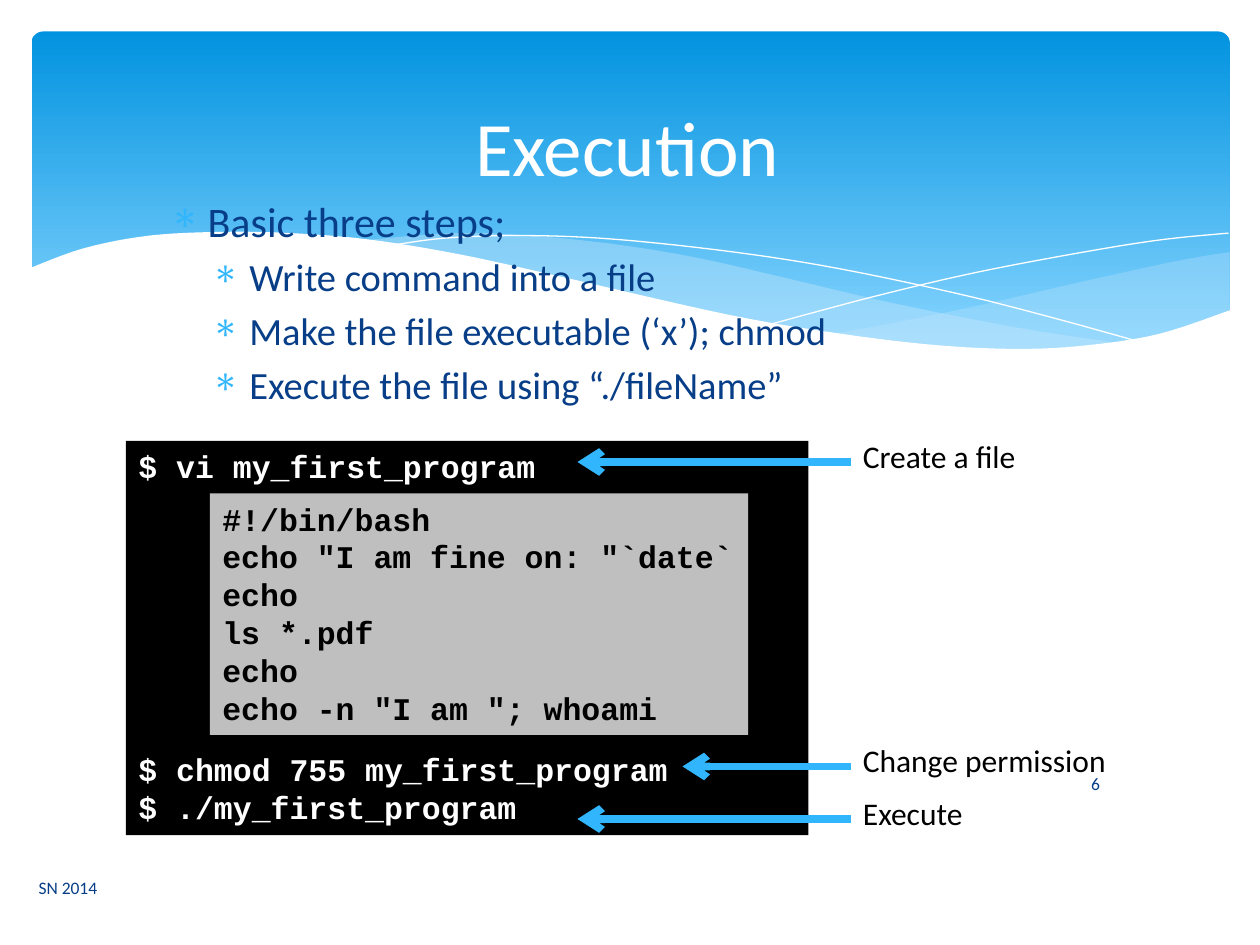
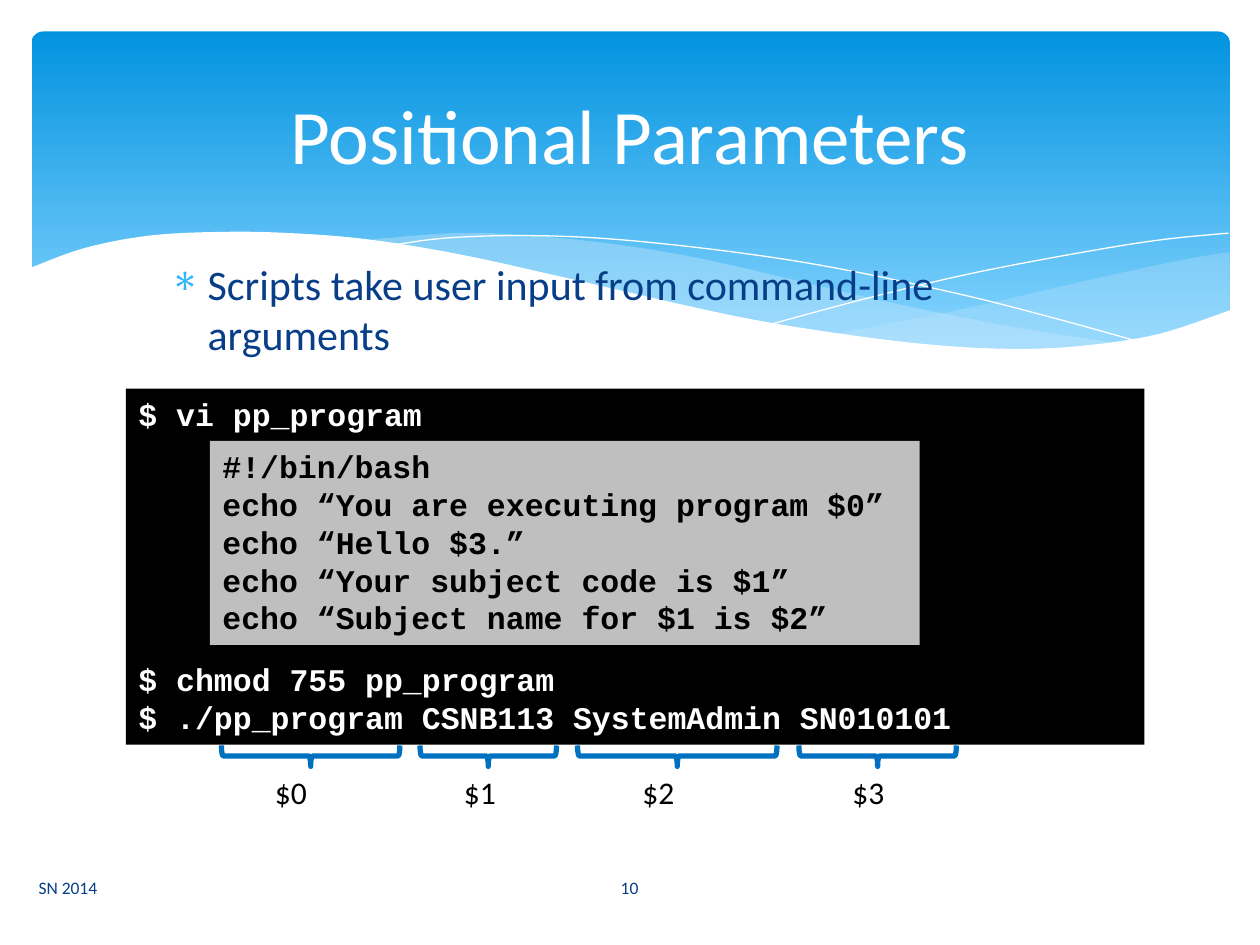
"""Build two shell scripting slides: script execution and positional parameters."""
from lxml import etree
from pptx import Presentation
from pptx import util as u
from pptx.dml.color import RGBColor
from pptx.enum import shapes, text
from pptx.oxml.ns import qn

COLORS = {
    "sky_top": "0293E0", "sky_bottom": "83D3FE", "wave": "C6E7FC",
    "white": "FFFFFF", "black": "000000", "navy": "073E87",
    "accent": "31B6FD", "gray": "BFBFBF", "brace": "0070C0",
}
FORMATS = {
    "title": {"name": "Calibri", "size": u.Pt(44), "color": "white"},
    "body": {"name": "Calibri", "size": u.Pt(24), "color": "navy"},
    "sub": {"name": "Calibri", "size": u.Pt(22), "color": "navy"},
    "footer": {"name": "Calibri", "size": u.Pt(10), "color": "navy"},
    "label": {"name": "Calibri", "size": u.Pt(18), "color": "black"},
    "shell": {"name": "Courier New", "size": u.Pt(18), "bold": True, "color": "white"},
    "code": {"name": "Courier New", "size": u.Pt(18), "bold": True, "color": "black"},
}
CODE_LINE = 21.65
RIGHT_WAVE = (
    [(702.7, 144), (673.2, 149), (619.9, 160.6), (560.9, 174.2), (508.3, 185),
     (475.9, 190.8)],
    [(475.9, 190.8), (517.7, 195.8), (553.7, 199.4), (586.1, 200.2), (621.4, 198),
     (651.6, 193.7), (678.2, 186.5), (702.7, 177.8)],
)
LONG_WAVE = (
    [(643, 196.6), (581, 187.2), (508.3, 172.8), (452.9, 159.8), (399.6, 147.6),
     (352.1, 139.7), (302.4, 134.6), (259.9, 133.2), (205.9, 137.5)],
    [(205.9, 137.5), (260.6, 146.2), (323.3, 159.8), (381.6, 172.8), (445, 185.8),
     (500.4, 194.4), (547.9, 199.4), (589, 200.2), (643, 196.6)],
)
FALLING_LINE = [(222.5, 140.4), (254.2, 136.1), (299.5, 134.6), (352.1, 136.8),
                (419, 144), (478.8, 153.4), (547.2, 167.8), (598.3, 180.7),
                (653, 195.8)]
RISING_LINE = [(441.4, 185), (500.4, 169.2), (558.7, 155.5), (623.5, 143.3),
               (665.3, 136.8), (702, 133.2)]
WHITE_EDGE = [(703.4, 177.1), (662.4, 190.8), (621.4, 197.3), (582.5, 199.4),
              (535.7, 197.3), (481, 190.8), (416.9, 180), (321.8, 158.4),
              (262.8, 145.4), (210.2, 136.8), (165.6, 133.2), (127.4, 132.5),
              (85.7, 134.6), (48.2, 141.8), (16.6, 153.4)]
WHITE_CORNERS = [(16.6, 237), (703.4, 237)]


def rgb(name):
    """Return the named colour."""
    return RGBColor.from_string(COLORS[name])


def pts(*values):
    """Convert numbers in points to lengths."""
    return [u.Pt(v) for v in values]


def smooth(knots, steps=6):
    """Return points on a Catmull-Rom curve through the knots."""
    ends = [knots[0], *knots, knots[-1]]
    curve = [knots[0]]
    for a, b, c, d in zip(ends, ends[1:], ends[2:], ends[3:]):
        for i in range(1, steps + 1):
            t = i / steps
            curve.append(tuple(
                0.5 * (2 * q + (s - o) * t + (2 * o - 5 * q + 4 * s - v) * t ** 2
                       + (3 * q - o - 3 * s + v) * t ** 3)
                for o, q, s, v in zip(a, b, c, d)))
    return curve


def style_run(r, fmt):
    """Apply a named text format to a run."""
    for key, value in FORMATS[fmt].items():
        if key == "color":
            r.font.color.rgb = rgb(value)
        else:
            setattr(r.font, key, value)


def add_paragraph(tf, content, fmt, **props):
    """Fill the first free paragraph of a frame and return it."""
    p = tf.paragraphs[0]
    if p.runs:
        p = tf.add_paragraph()
    r = p.add_run()
    r.text = content
    style_run(r, fmt)
    for key, value in props.items():
        setattr(p, key, value)
    return p


def add_label(s, content, box, fmt="label", align=text.PP_ALIGN.LEFT,
              anchor=text.MSO_ANCHOR.TOP, wrap=True):
    """Add a text box with one line of text."""
    tf = s.shapes.add_textbox(*pts(*box)).text_frame
    tf.word_wrap = wrap
    tf.vertical_anchor = anchor
    add_paragraph(tf, content, fmt, alignment=align)


def add_freeform(s, points, fill=None, alpha=None):
    """Add a filled outline, or an open white hairline when no fill is given."""
    start, *rest = [pts(*point) for point in points]
    builder = s.shapes.build_freeform(*start)
    builder.add_line_segments(rest, close=fill is not None)
    sp = builder.convert_to_shape()
    sp.shadow.inherit = False
    if fill is None:
        sp.fill.background()
        sp.line.color.rgb = rgb("white")
        sp.line.width = u.Pt(0)
        return
    sp.fill.solid()
    sp.fill.fore_color.rgb = rgb(fill)
    sp.line.fill.background()
    if alpha:
        color = sp._element.spPr.find(qn("a:solidFill"))[0]
        etree.SubElement(color, qn("a:alpha"), val=str(alpha * 1000))


def add_band(s):
    """Add the blue gradient band with its waves."""
    sp = s.shapes.add_shape(shapes.MSO_SHAPE.ROUNDED_RECTANGLE, *pts(18, 18, 684.7, 194.4))
    sp.adjustments[0] = 0.034
    sp.shadow.inherit = False
    sp.line.fill.background()
    sp.fill.gradient()
    sp.fill.gradient_angle = 270
    stops = zip(sp.fill.gradient_stops, (0, 0.9), ("sky_top", "sky_bottom"))
    for stop, position, color in stops:
        stop.position = position
        stop.color.rgb = rgb(color)
    for (top, bottom), alpha in ((RIGHT_WAVE, 29), (LONG_WAVE, 40)):
        add_freeform(s, smooth(top) + smooth(bottom), "wave", alpha)
    for knots in (FALLING_LINE, RISING_LINE):
        add_freeform(s, smooth(knots))
    add_freeform(s, smooth(WHITE_EDGE) + WHITE_CORNERS, "white")


def add_bullets(s, top, items):
    """Add the bulleted body text from (level, text) pairs."""
    tf = s.shapes.add_textbox(*pts(90, top, 540, 283.5)).text_frame
    tf.word_wrap = True
    for level, content in items:
        fmt = ("body", "sub")[level]
        p = add_paragraph(tf, content, fmt, level=level,
                          space_before=int(FORMATS[fmt]["size"] * 0.2))
        pPr = p._p.get_or_add_pPr()
        pPr.set("marL", str(u.Pt((21.6, 45.4)[level])))
        pPr.set("indent", str(u.Pt(-21.6)))
        color = etree.SubElement(pPr, qn("a:buClr"))
        etree.SubElement(color, qn("a:srgbClr"), val=COLORS["accent"])
        etree.SubElement(pPr, qn("a:buChar"), char="∗")


def add_panel(s, box, fill, fmt, lines, wrap=True):
    """Add a rectangle of code and return its text frame."""
    sp = s.shapes.add_shape(shapes.MSO_SHAPE.RECTANGLE, *pts(*box))
    sp.shadow.inherit = False
    sp.fill.solid()
    sp.fill.fore_color.rgb = rgb(fill)
    sp.line.fill.background()
    tf = sp.text_frame
    tf.word_wrap = wrap
    tf.vertical_anchor = text.MSO_ANCHOR.TOP
    for line in lines:
        add_paragraph(tf, line, fmt, alignment=text.PP_ALIGN.LEFT)
    return tf


def add_terminal(s, box, commands, script_box, script):
    """Add a terminal with a script file shown after its first command."""
    tf = add_panel(s, box, "black", "shell", commands)
    tf.paragraphs[1].space_before = u.Pt((len(script) + 1) * CODE_LINE)
    add_panel(s, script_box, "gray", "code", script, wrap=False)


def add_callout(s, content, tip, y, width):
    """Add an arrow to the terminal and its label."""
    cxn = s.shapes.add_connector(shapes.MSO_CONNECTOR.STRAIGHT, *pts(486, y, tip, y))
    cxn.line.color.rgb = rgb("accent")
    cxn.line.width = u.Pt(4.5)
    etree.SubElement(cxn.line._get_or_add_ln(), qn("a:tailEnd"), type="arrow")
    etree.SubElement(cxn._element.spPr, qn("a:effectLst"))
    add_label(s, content, (486, y - 18, width, 29))


def add_brace(s, center, length, label, label_left):
    """Add a brace below a command argument and its label."""
    sp = s.shapes.add_shape(shapes.MSO_SHAPE.RIGHT_BRACE,
                            *pts(center - 6, 432 - length / 2, 12, length))
    sp.rotation = 90
    sp.shadow.inherit = False
    sp.fill.background()
    sp.line.color.rgb = rgb("brace")
    sp.line.width = u.Pt(3)
    add_label(s, label, (label_left, 438, 36, 29), wrap=False)


def add_slide(prs, title, title_box, number, number_box):
    """Add a slide with the shared band, title and footers."""
    s = prs.slides.add_slide(prs.slide_layouts[6])
    add_band(s)
    middle, center = text.MSO_ANCHOR.MIDDLE, text.PP_ALIGN.CENTER
    add_label(s, title, title_box, "title", center, middle)
    add_label(s, "SN 2014", (15, 492.5, 298, 28.8), "footer", anchor=middle)
    add_label(s, number, number_box, "footer", center, middle)
    return s


def build_execution(prs):
    """Build the slide on running a script."""
    s = add_slide(prs, "Execution", (84, 36, 549, 95), "6", (604, 433.5, 44, 28.8))
    add_bullets(s, 108, [
        (0, "Basic three steps;"),
        (1, "Write command into a file"),
        (1, "Make the file executable (‘x’); chmod"),
        (1, "Execute the file using “./fileName”"),
    ])
    add_terminal(
        s, (72, 252, 390, 225.3),
        ["$ vi my_first_program", "$ chmod 755 my_first_program", "$ ./my_first_program"],
        (120, 282, 307.5, 138),
        ["#!/bin/bash", 'echo "I am fine on: "`date`', "echo", "ls *.pdf", "echo",
         'echo -n "I am "; whoami'])
    for callout in (("Create a file", 330, 264, 132),
                    ("Change permission", 390, 438, 180),
                    ("Execute", 330, 468, 132)):
        add_callout(s, *callout)


def build_parameters(prs):
    """Build the slide on positional parameters."""
    s = add_slide(prs, "Positional Parameters", (36, 27, 648, 98.5), "10",
                  (314, 492.5, 91.5, 28.8))
    add_bullets(s, 144, [(0, "Scripts take user input from command-line arguments")])
    add_terminal(
        s, (72, 222, 582, 203.5),
        ["$ vi pp_program", "$ chmod 755 pp_program",
         "$ ./pp_program CSNB113 SystemAdmin SN010101"],
        (120, 252, 405.5, 116.5),
        ["#!/bin/bash", "echo “You are executing program $0”", "echo “Hello $3.”",
         "echo “Your subject code is $1”", "echo “Subject name for $1 is $2”"])
    braces = ((177.5, 102, 150), (279, 78, 258), (387, 114, 360), (501.5, 90, 480))
    for i, (center, length, label_left) in enumerate(braces):
        add_brace(s, center, length, f"${i}", label_left)


def main():
    """Build and save the presentation."""
    prs = Presentation()
    prs.slide_width, prs.slide_height = pts(720, 540)
    build_execution(prs)
    build_parameters(prs)
    prs.save("out.pptx")


if __name__ == "__main__":
    main()
